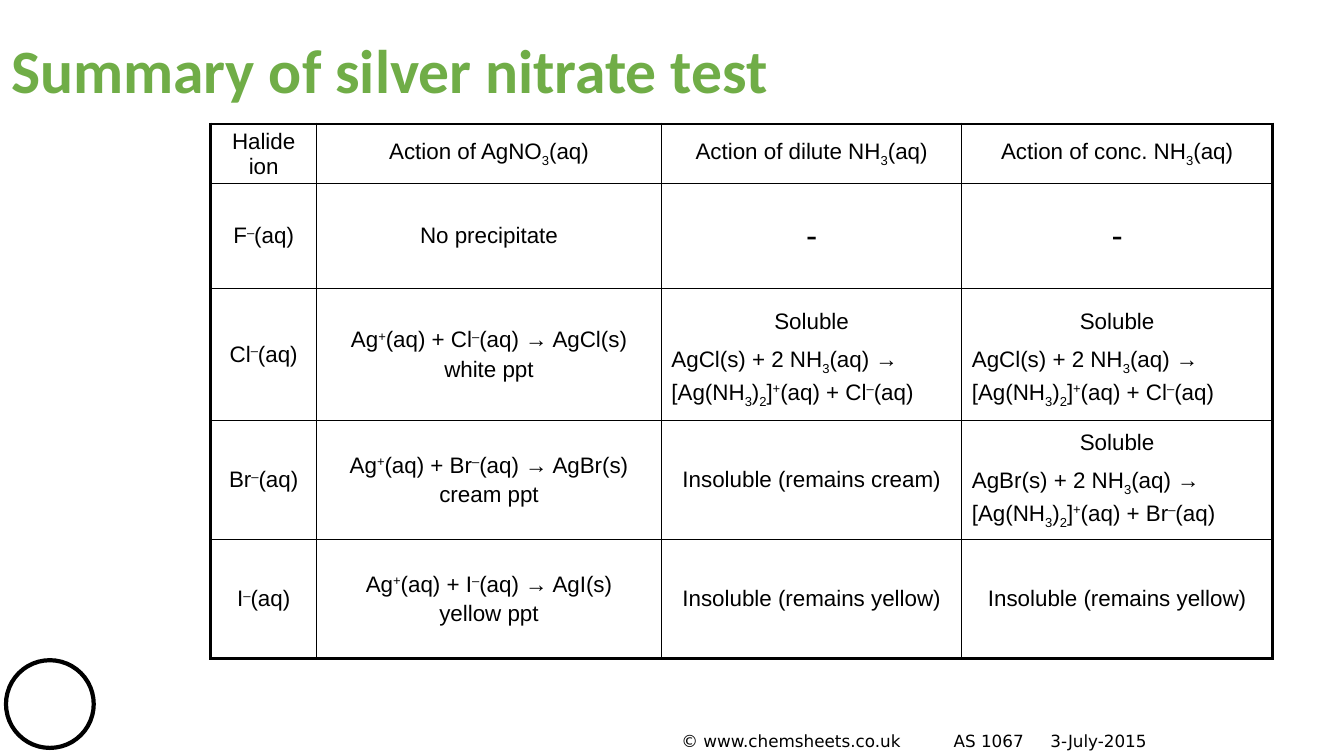
from lxml.etree import SubElement
from pptx import Presentation
from pptx.dml.color import RGBColor
from pptx.enum.shapes import MSO_SHAPE
from pptx.enum.text import MSO_ANCHOR, MSO_AUTO_SIZE, PP_ALIGN
from pptx.oxml.ns import qn
from pptx.util import Inches, Pt

BLACK = RGBColor(0x00, 0x00, 0x00)
WHITE = RGBColor(0xFF, 0xFF, 0xFF)
GREEN = RGBColor(0x70, 0xAD, 0x47)

COLUMN_WIDTHS = [1.05, 3.42, 2.98, 3.08]
ROW_HEIGHTS = [0.59, 1.04, 1.31, 1.18, 1.18]
BASELINES = {"~": "-25000", "^": "30000"}


def dissolving(halide):
    """Return the lines for a precipitate that dissolves in ammonia."""
    return f"Soluble\nAg{halide}(s) + 2 NH~3(aq) →\n[Ag(NH~3)~2]^+(aq) + {halide}^–(aq)"


def halide_row(halide, colour, dilute, concentrated):
    """Return the four cell texts for a halide that precipitates."""
    equation = f"Ag^+(aq) + {halide}^–(aq) → Ag{halide}(s)\n{colour} ppt"
    return [f"{halide}^–(aq)", equation, dilute, concentrated]


TABLE_ROWS = [
    ["Halide ion", "Action of AgNO~3(aq)", "Action of dilute NH~3(aq)", "Action of conc. NH~3(aq)"],
    ["F^–(aq)", "No precipitate", "-", "-"],
    halide_row("Cl", "white", dissolving("Cl"), dissolving("Cl")),
    halide_row("Br", "cream", "Insoluble (remains cream)", dissolving("Br")),
    halide_row("I", "yellow", "Insoluble (remains yellow)", "Insoluble (remains yellow)"),
]


def add_run(paragraph, text, size, font="Arial", colour=BLACK, bold=False, baseline=None):
    """Add one formatted run to a paragraph."""
    run = paragraph.add_run()
    run.text = text
    run.font.size = Pt(size)
    run.font.name = font
    run.font.color.rgb = colour
    run.font.bold = bold
    if baseline:
        run.font._element.set("baseline", baseline)


def add_formula(paragraph, text, size):
    """Add runs, lowering the character after ~ and raising the one after ^."""
    plain = ""
    characters = iter(text)
    for character in characters:
        if character in BASELINES:
            add_run(paragraph, plain, size)
            add_run(paragraph, next(characters), size, baseline=BASELINES[character])
            plain = ""
        else:
            plain += character
    if plain:
        add_run(paragraph, plain, size)


def set_borders(cell, widths):
    """Draw the left, right, top and bottom borders of a cell."""
    properties = cell._tc.get_or_add_tcPr()
    for side, width in zip("LRTB", widths):
        line = SubElement(properties, qn(f"a:ln{side}"), w=str(Pt(width)))
        fill = SubElement(line, qn("a:solidFill"))
        SubElement(fill, qn("a:srgbClr"), val=str(BLACK))


def fill_cell(cell, text):
    """Write the lines of a cell, with left-aligned equations below Soluble."""
    cell.vertical_anchor = MSO_ANCHOR.MIDDLE
    cell.fill.background()
    lines = text.split("\n")
    size = 24 if text == "-" else 16
    for index, line in enumerate(lines):
        frame = cell.text_frame
        paragraph = frame.add_paragraph() if index else frame.paragraphs[0]
        is_equation = index > 0 and lines[0] == "Soluble"
        paragraph.alignment = PP_ALIGN.LEFT if is_equation else PP_ALIGN.CENTER
        if index:
            paragraph.space_before = Pt(9.5 if is_equation and index == 1 else 3.2)
        add_formula(paragraph, line, size)


def add_summary_table(slide, left, top):
    """Add the table of halide ions and their reactions."""
    row_count, column_count = len(ROW_HEIGHTS), len(COLUMN_WIDTHS)
    table = slide.shapes.add_table(
        row_count, column_count, Inches(left), Inches(top),
        Inches(sum(COLUMN_WIDTHS)), Inches(sum(ROW_HEIGHTS))).table
    table.first_row = False
    table.horz_banding = False
    for column, width in zip(table.columns, COLUMN_WIDTHS):
        column.width = Inches(width)
    for row, height in zip(table.rows, ROW_HEIGHTS):
        row.height = Inches(height)
    for row_index, texts in enumerate(TABLE_ROWS):
        for column_index, text in enumerate(texts):
            cell = table.cell(row_index, column_index)
            outer_sides = [column_index == 0, column_index == column_count - 1,
                           row_index == 0, row_index == row_count - 1]
            set_borders(cell, [2.25 if outer else 1 for outer in outer_sides])
            fill_cell(cell, text)
            if text == dissolving("Cl"):
                cell.margin_top = Inches(0.14)


def add_title(slide, left, top, width, height):
    """Place and format the title."""
    title = slide.shapes.title
    title.left, title.top = Inches(left), Inches(top)
    title.width, title.height = Inches(width), Inches(height)
    frame = title.text_frame
    frame.auto_size = MSO_AUTO_SIZE.NONE
    frame.vertical_anchor = MSO_ANCHOR.MIDDLE
    paragraph = frame.paragraphs[0]
    paragraph.alignment = PP_ALIGN.LEFT
    paragraph.line_spacing = 0.9
    add_run(paragraph, "Summary of silver nitrate test", 44, "Calibri", GREEN, True)


def add_corner_circle(slide, left, top, diameter):
    """Add the outlined circle in the corner."""
    shape = slide.shapes.add_shape(
        MSO_SHAPE.OVAL, Inches(left), Inches(top), Inches(diameter), Inches(diameter))
    shape.shadow.inherit = False
    shape.fill.solid()
    shape.fill.fore_color.rgb = WHITE
    shape.line.color.rgb = BLACK
    shape.line.width = Pt(3)


def add_footer(slide, left, top, width, height):
    """Add the copyright line with its reference and date at tab stops."""
    shape = slide.shapes.add_textbox(Inches(left), Inches(top), Inches(width), Inches(height))
    shape.text_frame.word_wrap = True
    paragraph = shape.text_frame.paragraphs[0]
    tabs = SubElement(paragraph._p.get_or_add_pPr(), qn("a:tabLst"))
    for position in (2.7, 3.66):
        SubElement(tabs, qn("a:tab"), pos=str(Inches(position)), algn="l")
    add_run(paragraph, "© www.chemsheets.co.uk\tAS 1067\t3-July-2015", 12, "DejaVu Sans")


def main():
    """Build and save the slide."""
    presentation = Presentation()
    presentation.slide_width = Inches(13.33)
    presentation.slide_height = Inches(7.5)
    slide = presentation.slides.add_slide(presentation.slide_layouts[5])
    add_corner_circle(slide, 0.06, 6.55, 0.87)
    add_summary_table(slide, 2.09, 1.23)
    add_footer(slide, 6.66, 7.2, 5.04, 0.3)
    add_title(slide, 0.01, 0, 11.5, 1.45)
    presentation.save("out.pptx")


if __name__ == "__main__":
    main()
